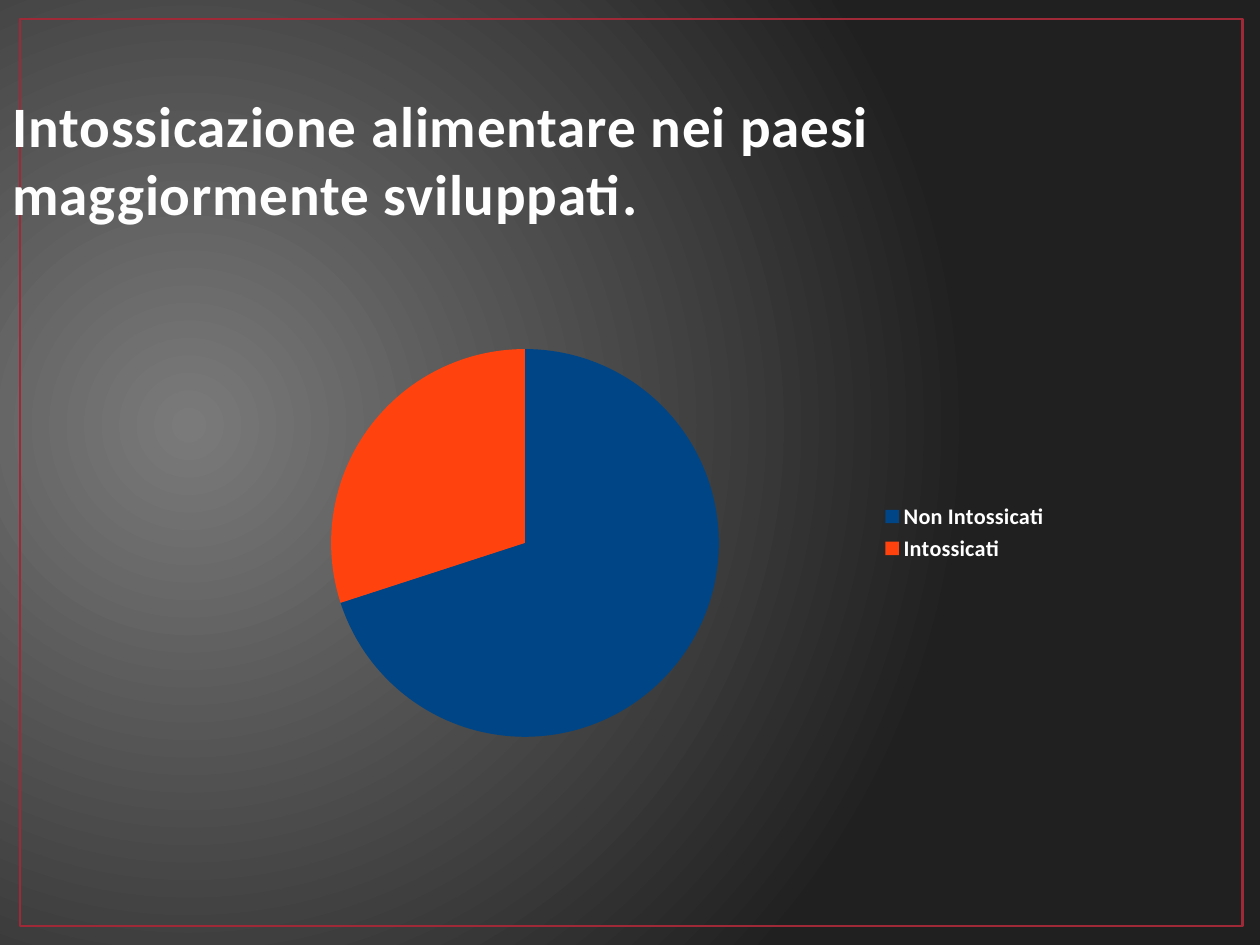
from lxml import etree
from pptx import Presentation
from pptx.chart.data import CategoryChartData
from pptx.dml.color import RGBColor
from pptx.enum import chart as charts, shapes, text
from pptx.oxml import parse_xml
from pptx.oxml.ns import nsdecls, qn
from pptx.util import Cm, Pt


def tint(code):
    return RGBColor.from_string(code)


def layout(**parts):
    vals = "".join(f'<c:{k} val="{v}"/>' for k, v in parts.items())
    return parse_xml(f'<c:layout {nsdecls("c")}><c:manualLayout>'
                     f'<c:xMode val="edge"/><c:yMode val="edge"/>{vals}'
                     '</c:manualLayout></c:layout>')


deck = Presentation()
deck.slide_width, deck.slide_height = Cm(28), Cm(21)
slide = deck.slides.add_slide(deck.slide_layouts[6])

# Background: circular glow left of centre
fill = slide.background.fill
fill.gradient()
for stop, code in zip(fill.gradient_stops, ("7A7A7A", "202020")):
    stop.color.rgb = tint(code)
grad = slide.element.find(".//" + qn("a:gradFill"))
grad.remove(grad.find(qn("a:lin")))
glow = etree.SubElement(grad, qn("a:path"), {"path": "circle"})
etree.SubElement(glow, qn("a:fillToRect"),
                 {"l": "15000", "t": "50000", "r": "85000", "b": "60000"})

# Red frame
frame = slide.shapes.add_shape(shapes.MSO_SHAPE.RECTANGLE,
                               Cm(0.45), Cm(0.42), Cm(27.16), Cm(20.16))
frame.shadow.inherit = False
frame.fill.background()
frame.line.color.rgb = tint("9F2936")
frame.line.width = Pt(1.5)

# Title
title = slide.shapes.add_textbox(0, Cm(1.7), Cm(25.2), Cm(3.5)).text_frame
title.word_wrap = True
title.vertical_anchor = text.MSO_ANCHOR.BOTTOM
title.margin_left = title.margin_right = Cm(0.28)
title.margin_top = title.margin_bottom = Cm(0.15)
line = title.paragraphs[0]
run = line.add_run()
run.text = "Intossicazione alimentare nei paesi maggiormente sviluppati."
run.font.name, run.font.size, run.font.bold = "Calibri", Pt(36), True
run.font.color.rgb = tint("FEFEFE")
run.font._element.set("spc", "55")

# Pie chart: a new pie takes one series, replace_data brings in both
data = CategoryChartData()
data.categories = ["Non Intossicati", "Intossicati"]
for name in ("Series 1", "Series 2"):
    data.add_series(name, (70, 30))
chart = slide.shapes.add_chart(charts.XL_CHART_TYPE.PIE, Cm(3.4), Cm(7.19),
                               Cm(20.93), Cm(9.47), data).chart
chart.replace_data(data)
chart.has_title = False
chart.font.name, chart.font.size = "Calibri", Pt(10)
chart.font.color.rgb = tint("FFFFFF")
pie = chart.plots[0]
pie.vary_by_categories = True
for series in pie.series:
    for i, code in enumerate(("004586", "FF420E")):
        part = series.points[i].format.fill
        part.solid()
        part.fore_color.rgb = tint(code)

# Legend
chart.has_legend = True
legend = chart.legend
legend.position = charts.XL_LEGEND_POSITION.RIGHT
legend.include_in_layout = False
legend.font.name, legend.font.size, legend.font.bold = "Calibri", Pt(14), True
legend.font.color.rgb = tint("FFFFFF")

# Places of the pie and the legend within the chart
area = chart.element.find(".//" + qn("c:plotArea"))
key = chart.element.find(".//" + qn("c:legend"))
for box in (area, key):
    for old in box.findall(qn("c:layout")):
        box.remove(old)
area.insert(0, layout(x=0.12, y=0.06, w=0.55, h=0.91))
key.find(qn("c:legendPos")).addnext(layout(x=0.77, y=0.41))

deck.save("out.pptx")
